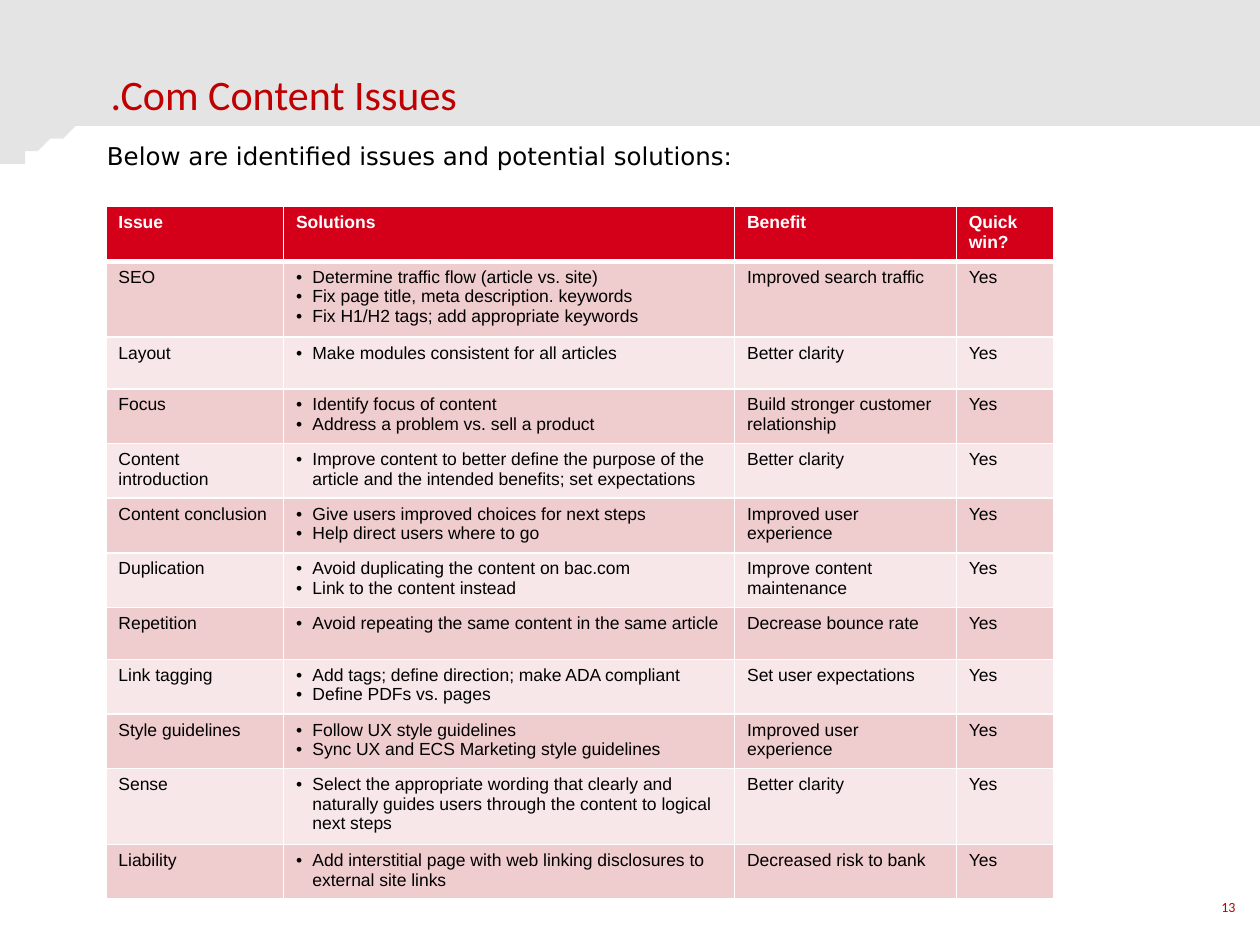
"""Build a slide with a table of content issues, solutions and benefits."""
from dataclasses import dataclass

from lxml.etree import SubElement
from pptx import Presentation
from pptx.dml.color import RGBColor
from pptx.enum.text import MSO_ANCHOR, PP_ALIGN
from pptx.oxml.ns import qn
from pptx.util import Inches, Pt


@dataclass(frozen=True)
class Theme:
    band: str = "E4E4E4"
    accent: str = "C00000"
    header: str = "D4001A"
    stripes: tuple = ("EFCCCD", "F7E7E8")
    white: str = "FFFFFF"
    black: str = "000000"
    heading_font: str = "Calibri"
    intro_font: str = "DejaVu Sans"
    table_font: str = "Arial"
    title_size: int = 24
    intro_size: int = 14
    table_size: int = 10
    number_size: int = 8


theme = Theme()


def write(frame, text, *, size, font, color, bold=False, align=PP_ALIGN.LEFT,
          anchor=MSO_ANCHOR.TOP, bullet=False):
    frame.word_wrap = True
    frame.vertical_anchor = anchor
    for index, line in enumerate(text.split("\n")):
        paragraph = frame.add_paragraph() if index else frame.paragraphs[0]
        paragraph.alignment = align
        if bullet:
            properties = paragraph._p.get_or_add_pPr()
            properties.set("marL", str(Inches(0.13)))
            properties.set("indent", str(-Inches(0.13)))
            SubElement(properties, qn("a:buFont"), typeface="Arial")
            SubElement(properties, qn("a:buChar"), char="•")
        run = paragraph.add_run()
        run.text = line
        run.font.size = Pt(size)
        run.font.name = font
        run.font.bold = bold
        run.font.color.rgb = RGBColor.from_string(color)


def style_cell(cell, fill, top, bottom):
    properties = cell._tc.get_or_add_tcPr()
    for edge, width in (("L", 1), ("R", 1), ("T", top), ("B", bottom)):
        border = SubElement(properties, qn(f"a:ln{edge}"), w=str(Pt(width)))
        SubElement(SubElement(border, qn("a:solidFill")), qn("a:srgbClr"), val=theme.white)
    cell.fill.solid()
    cell.fill.fore_color.rgb = RGBColor.from_string(fill)


deck = Presentation()
deck.slide_width, deck.slide_height = Inches(10), Inches(7.5)
col, row = deck.slide_width / 100, deck.slide_height / 75
slide = deck.slides.add_slide(deck.slide_layouts[6])

# fmt: off
wave_curves = [
    ((7.6, 9.9), (7.2, 9.7), (6.8, 9.6), (6.4, 9.8)),
    ((6.4, 9.8), (5.1, 10.5), (1.1, 13.4), (0, 13.5)),
]
# fmt: on
steps = 12
band_outline = [(100, 0), (100, 9.9), (7.6, 9.9)]
for curve in wave_curves:
    for step in range(1, steps + 1):
        t = step / steps
        weights = ((1 - t) ** 3, 3 * t * (1 - t) ** 2, 3 * t**2 * (1 - t), t**3)
        band_outline.append(tuple(
            sum(weight * point[axis] for weight, point in zip(weights, curve))
            for axis in (0, 1)))
outline = slide.shapes.build_freeform(0, 0, scale=(col, row))
outline.add_line_segments(band_outline, close=True)
band = outline.convert_to_shape()
band.shadow.inherit = False
band.fill.solid()
band.fill.fore_color.rgb = RGBColor.from_string(theme.band)
band.line.fill.background()

captions = [
    (7.8, 0.4, 87.2, 9.5, ".Com Content Issues",
     dict(size=theme.title_size, font=theme.heading_font, color=theme.accent,
          anchor=MSO_ANCHOR.BOTTOM)),
    (95, 70, 5, 4, "13",
     dict(size=theme.number_size, font=theme.heading_font, color=theme.accent,
          align=PP_ALIGN.CENTER, anchor=MSO_ANCHOR.MIDDLE)),
    (7.5, 10.7, 58.6, 3.4, "Below are identified issues and potential solutions:",
     dict(size=theme.intro_size, font=theme.intro_font, color=theme.black)),
]
for left, top, width, height, text, look in captions:
    caption = slide.shapes.add_textbox(
        int(left * col), int(top * row), int(width * col), int(height * row))
    write(caption.text_frame, text, **look)

issues = [
    ("Issue", "Solutions", "Benefit", "Quick win?"),
    ("SEO", "Determine traffic flow (article vs. site)\n"
     "Fix page title, meta description. keywords\n"
     "Fix H1/H2 tags; add appropriate keywords", "Improved search traffic", "Yes"),
    ("Layout", "Make modules consistent for all articles", "Better clarity", "Yes"),
    ("Focus", "Identify focus of content\nAddress a problem vs. sell a product",
     "Build stronger customer relationship", "Yes"),
    ("Content introduction", "Improve content to better define the purpose of the "
     "article and the intended benefits; set expectations", "Better clarity", "Yes"),
    ("Content conclusion", "Give users improved choices for next steps\n"
     "Help direct users where to go", "Improved user experience", "Yes"),
    ("Duplication", "Avoid duplicating the content on bac.com\n"
     "Link to the content instead", "Improve content maintenance", "Yes"),
    ("Repetition", "Avoid repeating the same content in the same article",
     "Decrease bounce rate", "Yes"),
    ("Link tagging", "Add tags; define direction; make ADA compliant\n"
     "Define PDFs vs. pages", "Set user expectations", "Yes"),
    ("Style guidelines", "Follow UX style guidelines\n"
     "Sync UX and ECS Marketing style guidelines", "Improved user experience", "Yes"),
    ("Sense", "Select the appropriate wording that clearly and naturally guides "
     "users through the content to logical next steps", "Better clarity", "Yes"),
    ("Liability", "Add interstitial page with web linking disclosures to external "
     "site links", "Decreased risk to bank", "Yes"),
]
column_widths = [14.1, 35.8, 17.6, 7.7]
row_height = 4.1
issue_table = slide.shapes.add_table(
    len(issues), len(column_widths), int(8.4 * col), int(16.4 * row),
    int(sum(column_widths) * col), int(len(issues) * row_height * row)).table
issue_table.horz_banding = False
for column, width in zip(issue_table.columns, column_widths):
    column.width = int(width * col)
for r, issue in enumerate(issues):
    issue_table.rows[r].height = int(row_height * row)
    is_header = r == 0
    for c, text in enumerate(issue):
        cell = issue_table.cell(r, c)
        style_cell(cell, theme.header if is_header else theme.stripes[(r - 1) % 2],
                   top=3 if r == 1 else 1, bottom=3 if is_header else 1)
        write(cell.text_frame, text, size=theme.table_size, font=theme.table_font,
              color=theme.white if is_header else theme.black,
              bold=is_header, bullet=c == 1 and not is_header)

deck.save("out.pptx")
